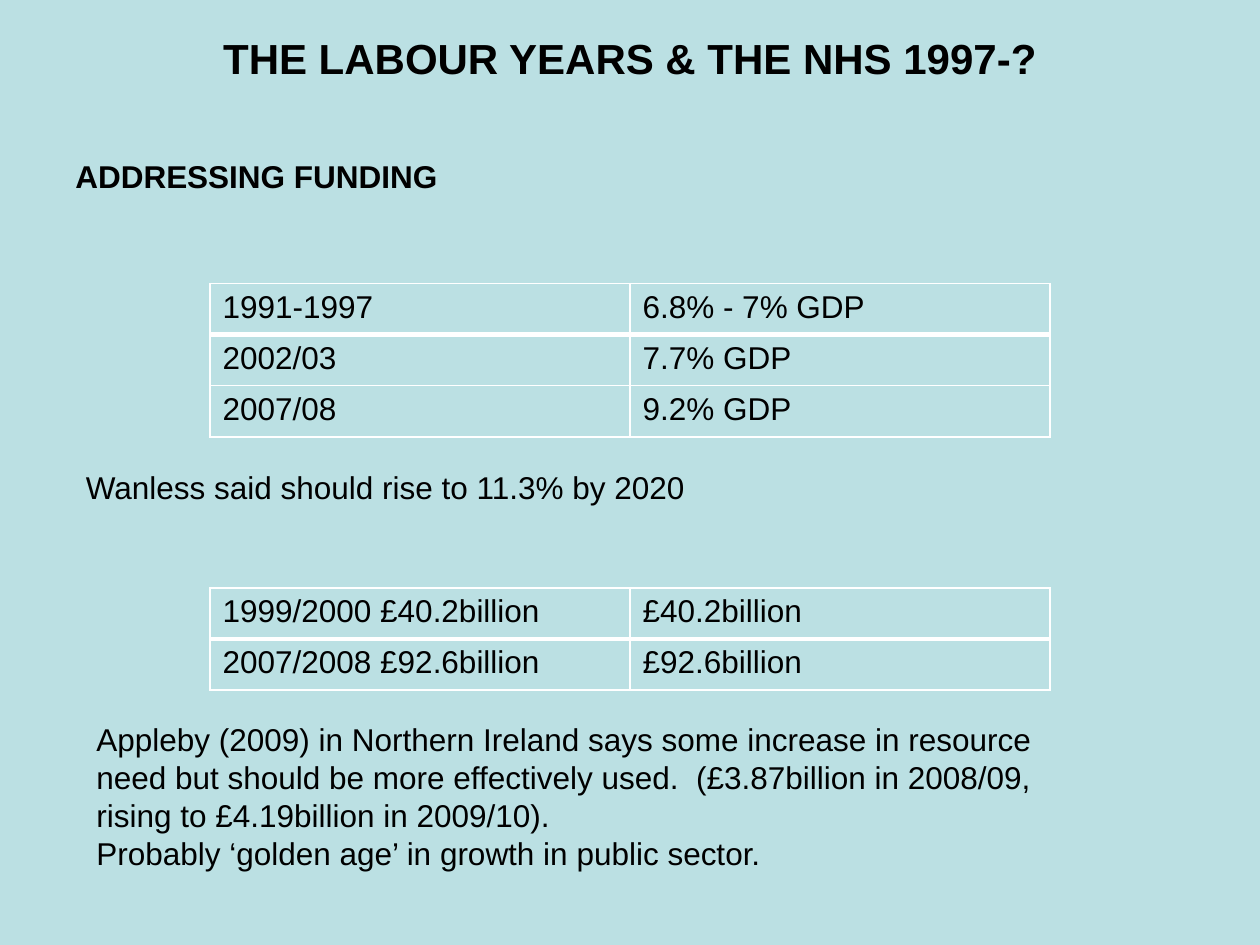
from dataclasses import dataclass

import pptx
import pptx.dml.color
import pptx.enum.text
import pptx.oxml
import pptx.oxml.ns
import pptx.util
from pptx.util import Pt

FONT = "Arial"
INK = "000000"
RULE = "FFFFFF"
PAPER = "BBE0E3"
ROW = 29.2
ALIGN = pptx.enum.text.PP_ALIGN
ANCHOR = pptx.enum.text.MSO_ANCHOR


@dataclass
class Note:
    left: float
    top: float
    width: float
    height: float
    lines: list[str]
    size: float = 18
    bold: bool = False
    align: ALIGN = ALIGN.LEFT
    anchor: ANCHOR = ANCHOR.TOP


@dataclass
class Grid:
    top: float
    rows: list[tuple[str, str]]


NOTES = [
    Note(36, 0, 648, 66, ["THE LABOUR YEARS & THE NHS 1997-?"], 24, True,
         ALIGN.CENTER, ANCHOR.MIDDLE),
    Note(36, 86, 648, 29, ["ADDRESSING FUNDING"], bold=True),
    Note(42, 264, 648, 29, ["Wanless said should rise to 11.3% by 2020"]),
    Note(48, 408, 552, 94.5, [
        "Appleby (2009) in Northern Ireland says some increase in resource "
        "need but should be more effectively used.  (£3.87billion in 2008/09, "
        "rising to £4.19billion in 2009/10).",
        "Probably ‘golden age’ in growth in public sector.",
    ]),
]
GRIDS = [
    Grid(162, [("1991-1997", "6.8% - 7% GDP"),
               ("2002/03", "7.7% GDP"),
               ("2007/08", "9.2% GDP")]),
    Grid(336, [("1999/2000 £40.2billion", "£40.2billion"),
               ("2007/2008 £92.6billion", "£92.6billion")]),
]


def tint(code: str) -> pptx.dml.color.RGBColor:
    return pptx.dml.color.RGBColor.from_string(code)


def add_run(para, text: str, size: float = 18, bold: bool = False) -> None:
    run = para.add_run()
    run.text = text
    run.font.name = FONT
    run.font.size = Pt(size)
    run.font.bold = bold
    run.font.color.rgb = tint(INK)


def add_note(slide, note: Note) -> None:
    box = slide.shapes.add_textbox(
        Pt(note.left), Pt(note.top), Pt(note.width), Pt(note.height))
    frame = box.text_frame
    frame.word_wrap = True
    frame.vertical_anchor = note.anchor
    for i, line in enumerate(note.lines):
        para = frame.add_paragraph() if i else frame.paragraphs[0]
        para.alignment = note.align
        add_run(para, line, note.size, note.bold)


def add_edge(cell, side: str, width: float) -> None:
    """Draw one border of a cell; call in the order L, R, T, B."""
    space = pptx.oxml.ns.nsdecls("a")
    edge = pptx.oxml.parse_xml(
        f'<a:ln{side} {space} w="{Pt(width)}"><a:solidFill>'
        f'<a:srgbClr val="{RULE}"/></a:solidFill></a:ln{side}>')
    cell._tc.get_or_add_tcPr().append(edge)


def add_grid(slide, grid: Grid) -> None:
    count = len(grid.rows)
    table = slide.shapes.add_table(
        count, 2, Pt(120), Pt(grid.top), Pt(480), Pt(ROW * count)).table
    table.first_row = False
    table.horz_banding = False
    for r, texts in enumerate(grid.rows):
        table.rows[r].height = Pt(ROW)
        for c, text in enumerate(texts):
            cell = table.cell(r, c)
            add_run(cell.text_frame.paragraphs[0], text)
            add_edge(cell, "L", 1)
            add_edge(cell, "R", 1)
            add_edge(cell, "T", 3 if r == 1 else 1)
            add_edge(cell, "B", 3 if r == 0 else 1)
            cell.fill.background()


def main() -> None:
    deck = pptx.Presentation()
    deck.slide_width, deck.slide_height = Pt(720), Pt(540)
    slide = deck.slides.add_slide(deck.slide_layouts[6])
    fill = slide.background.fill
    fill.solid()
    fill.fore_color.rgb = tint(PAPER)
    for note in NOTES:
        add_note(slide, note)
    for grid in GRIDS:
        add_grid(slide, grid)
    deck.save("out.pptx")


if __name__ == "__main__":
    main()
